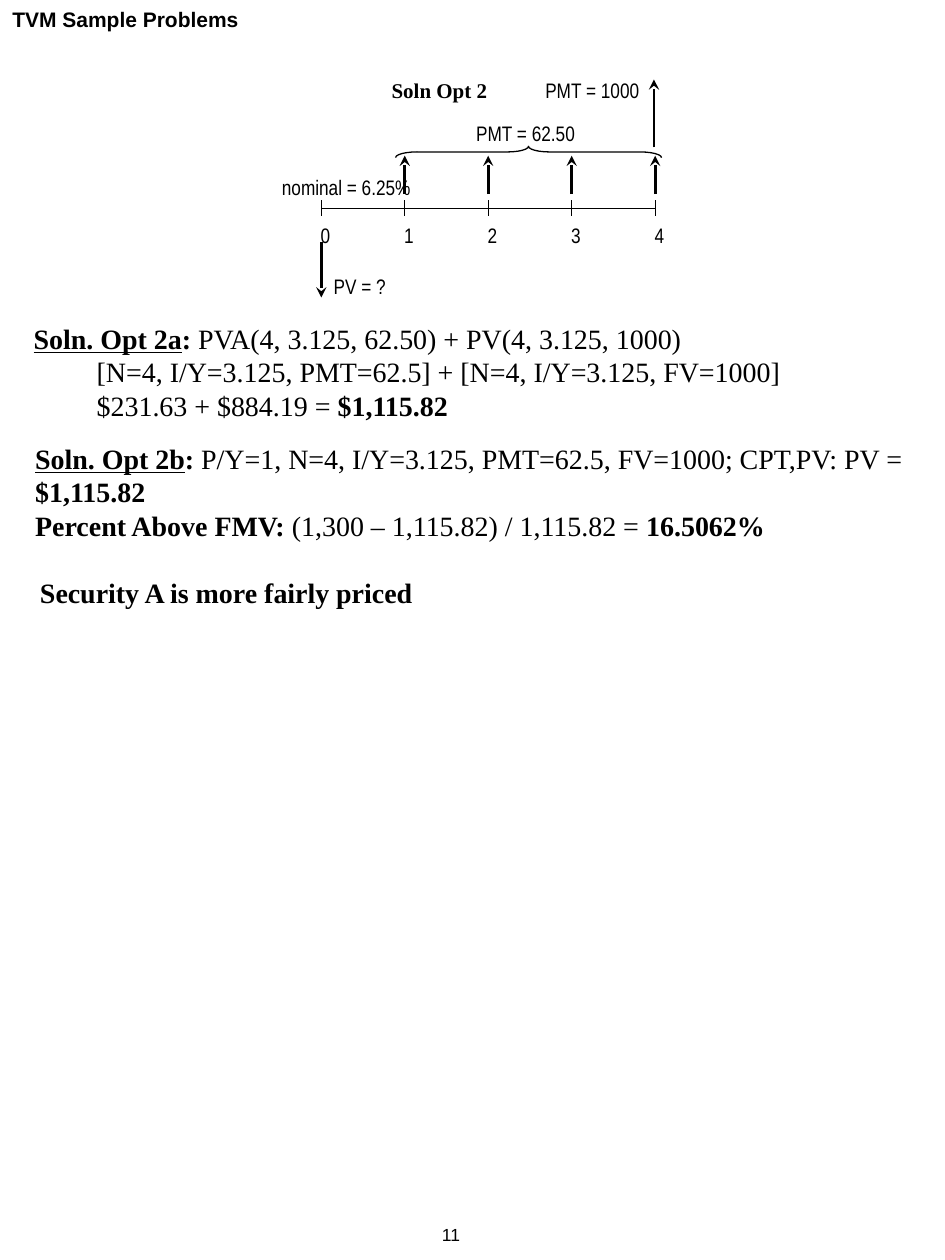
from typing import NamedTuple

from pptx import Presentation
from pptx.dml.color import RGBColor
from pptx.enum.shapes import MSO_CONNECTOR as Connector, MSO_SHAPE as Shape
from pptx.enum.text import MSO_AUTO_SIZE as AutoSize, PP_ALIGN as Align
from pptx.oxml.ns import qn
from pptx.util import Pt
from lxml.etree import SubElement

BLACK = RGBColor(0, 0, 0)
NARROW = {"name": "Arial Narrow", "size": Pt(12)}
HEADING = {"name": "Times New Roman", "size": Pt(12), "bold": True}
BODY = {"name": "Times New Roman", "size": Pt(16), "bold": False}
BOLD = BODY | {"bold": True}
UNDERLINED = BOLD | {"underline": True}
TITLE = {"name": "Arial", "size": Pt(12), "bold": True}
PAGE_NUMBER = {"name": "Arial", "size": Pt(10)}

AXIS_START, AXIS_Y, PERIOD = 183.6, 119, 47.7
PERIODS = 4
LABEL_HEIGHT = 21.6


class Run(NamedTuple):
    text: str
    style: dict


class Block(NamedTuple):
    left: float
    top: float
    width: float
    height: float
    paragraphs: list[list[Run]]
    wrap: bool = False
    grow: bool = True
    align: Align = Align.LEFT


class Arrow(NamedTuple):
    x: float
    start: float
    end: float


def label(left: float, top: float, width: float, text: str,
          style: dict = NARROW, wrap: bool = False) -> Block:
    return Block(left, top, width, LABEL_HEIGHT, [[Run(text, style)]], wrap)


CASH_FLOWS = [
    Arrow(AXIS_START + PERIODS * PERIOD - 0.7, 84.2, 45.4),
    *(Arrow(AXIS_START + n * PERIOD, 111, 89) for n in range(1, PERIODS + 1)),
    Arrow(AXIS_START, 138.2, 170),
]

DIAGRAM_LABELS = [
    label(265, 65.5, 71.3, "PMT = 62.50"),
    *(label(AXIS_START - 7.4 + n * PERIOD, 123.8, 20, str(n), wrap=n == PERIODS)
      for n in range(PERIODS + 1)),
    label(183.6, 152.6, 44.6, "PV = ?"),
    label(154, 96.5, 89.3, "nominal = 6.25%"),
    label(304.5, 41, 68.4, "PMT = 1000"),
    label(216.7, 41, 69.1, "Soln Opt 2", HEADING),
]

SOLUTIONS = [
    Block(12.2, 180, 527.8, 64.8, [
        [Run("Soln. Opt 2a", UNDERLINED), Run(":", BOLD),
         Run(" PVA(4, 3.125, 62.50) + PV(4, 3.125, 1000)", BODY)],
        [Run("\t[N=4, I/Y=3.125, PMT=62.5] + [N=4, I/Y=3.125, FV=1000]", BODY)],
        [Run("\t$231.63 + $884.19 = ", BODY), Run("$1,115.82", BOLD)],
    ], wrap=True),
    Block(13, 248.7, 527, 64.8, [
        [Run("Soln. Opt 2b", UNDERLINED), Run(":", BOLD),
         Run(" P/Y=1, N=4, I/Y=3.125, PMT=62.5, FV=1000; CPT,PV: PV = ", BODY),
         Run("$1,115.82", BOLD)],
        [Run("Percent Above FMV:", BOLD),
         Run(" (1,300 – 1,115.82) / 1,115.82 = ", BODY),
         Run("16.5062%", BOLD)],
    ], wrap=True),
    Block(15.8, 325.4, 230.4, 26.6,
          [[Run("Security A is more fairly priced", BOLD)]]),
]

PAGE_FURNITURE = [
    Block(234, 696.2, 36, 23.8, [[Run("11", PAGE_NUMBER)]],
          wrap=True, grow=False, align=Align.RIGHT),
    Block(0, 0, 234, 18, [[Run("TVM Sample Problems", TITLE)]],
          wrap=True, grow=False),
]


def draw_text(shapes, block: Block) -> None:
    box = shapes.add_textbox(*map(Pt, block[:4]))
    frame = box.text_frame
    frame.word_wrap = block.wrap
    frame.auto_size = AutoSize.SHAPE_TO_FIT_TEXT if block.grow else AutoSize.NONE
    for index, runs in enumerate(block.paragraphs):
        paragraph = frame.add_paragraph() if index else frame.paragraphs[0]
        paragraph.alignment = block.align
        for text, style in runs:
            run = paragraph.add_run()
            run.text = text
            run.font.color.rgb = BLACK
            for attribute, value in style.items():
                setattr(run.font, attribute, value)


def draw_line(shapes, x1: float, y1: float, x2: float, y2: float,
              width: float = 0.75, arrowhead: bool = False) -> None:
    line = shapes.add_connector(Connector.STRAIGHT, *map(Pt, (x1, y1, x2, y2)))
    line.line.color.rgb = BLACK
    line.line.width = Pt(width)
    properties = line._element.spPr
    if arrowhead:
        SubElement(properties.find(qn("a:ln")), qn("a:tailEnd"), type="stealth")
    SubElement(properties, qn("a:effectLst"))


def draw_brace(shapes) -> None:
    """Span the four level payments with a brace that opens downwards."""
    brace = shapes.add_shape(Shape.RIGHT_BRACE, *map(Pt, (298.8, 10.8, 6.5, 152)))
    brace.rotation = 270
    brace.adjustments[0] = 1.875
    brace.adjustments[1] = 0.5
    brace.shadow.inherit = False
    brace.fill.background()
    brace.line.color.rgb = BLACK
    brace.line.width = Pt(0.75)


def draw_timeline(shapes) -> None:
    for n in range(PERIODS + 1):
        x = AXIS_START + n * PERIOD
        draw_line(shapes, x, AXIS_Y - 4.6, x, AXIS_Y + 4.6)
    draw_line(shapes, AXIS_START, AXIS_Y, AXIS_START + PERIODS * PERIOD, AXIS_Y)
    for x, start, end in CASH_FLOWS:
        draw_line(shapes, x, start, x, end, width=1.5, arrowhead=True)
    draw_brace(shapes)
    for diagram_label in DIAGRAM_LABELS:
        draw_text(shapes, diagram_label)


def main() -> None:
    deck = Presentation()
    deck.slide_width, deck.slide_height = Pt(540), Pt(720)
    slide = deck.slides.add_slide(deck.slide_layouts[6])
    draw_timeline(slide.shapes.add_group_shape().shapes)
    for block in SOLUTIONS + PAGE_FURNITURE:
        draw_text(slide.shapes, block)
    deck.save("out.pptx")


if __name__ == "__main__":
    main()
